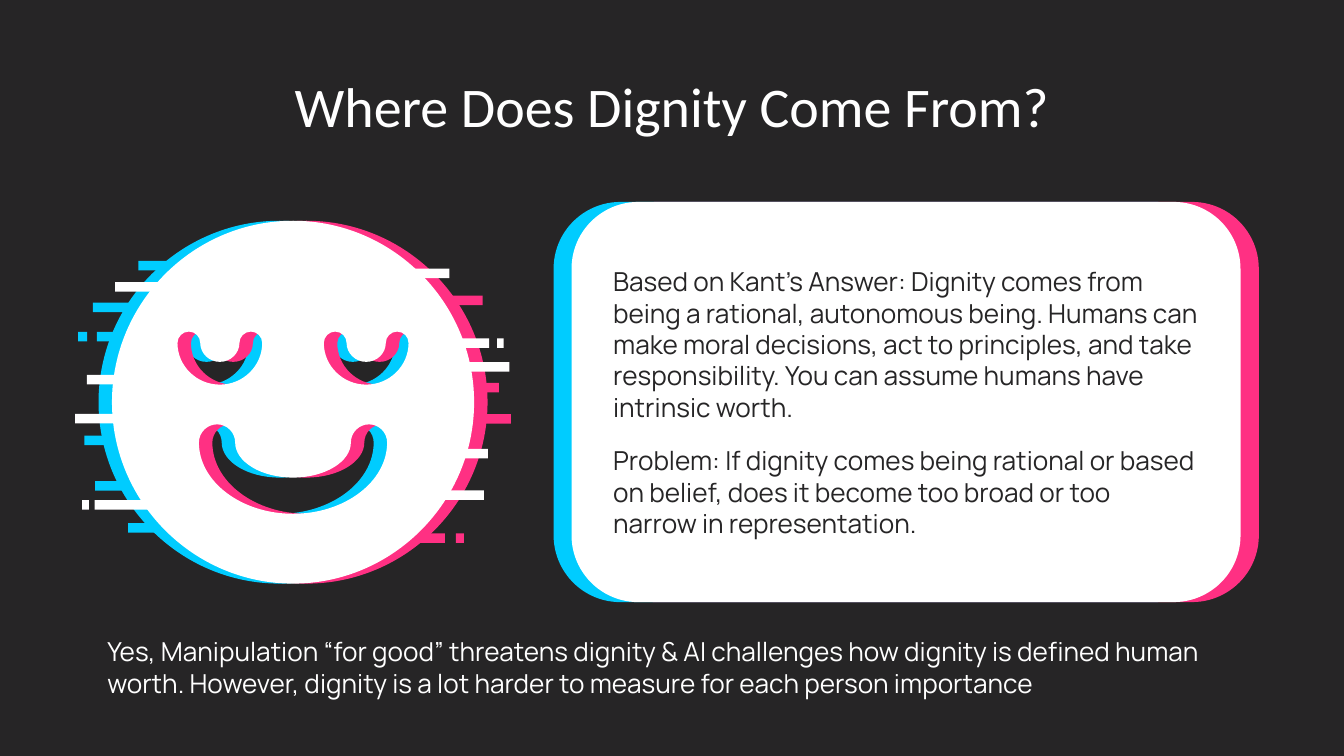
from math import cos, radians, sin
from lxml import etree
from pptx import Presentation
from pptx import util as u
from pptx.dml import color
from pptx.enum import shapes, text
from pptx.oxml import ns

DARK = color.RGBColor(0x26, 0x25, 0x26)
CYAN = color.RGBColor(0x00, 0xCC, 0xFF)
PINK = color.RGBColor(0xFF, 0x30, 0x83)
WHITE = color.RGBColor(0xFF, 0xFF, 0xFF)


def paint(shape, tone):
    shape.shadow.inherit = False
    shape.fill.solid()
    shape.fill.fore_color.rgb = tone
    shape.line.fill.background()


def arc(x, y, w, h, start, end):
    turn = 90 if end > start else -90
    pull = 0.55 * turn / 90
    dots = []
    for angle in range(start, end, turn):
        a, b = radians(angle), radians(angle + turn)
        dots += [(cos(a) - pull * sin(a), sin(a) + pull * cos(a)),
                 (cos(b) + pull * sin(b), sin(b) - pull * cos(b)),
                 (cos(b), sin(b))]
    return [(x + w * p, y + h * q) for p, q in dots]


deck = Presentation()
deck.slide_width, deck.slide_height = u.Pt(720), u.Pt(405)
slide = deck.slides.add_slide(deck.slide_layouts[6])
slide.background.fill.solid()
slide.background.fill.fore_color.rgb = DARK

card = slide.shapes.add_group_shape().shapes
for left, tone in [(296.6, CYAN), (316, PINK), (306.2, WHITE)]:
    panel = card.add_shape(shapes.MSO_SHAPE.ROUNDED_RECTANGLE,
                           u.Pt(left), u.Pt(108.2), u.Pt(358.4), u.Pt(214.4))
    panel.adjustments[0] = 0.167
    paint(panel, tone)

rings = []
for x, y, w, h, r in [(-39.2, -31.7, 22.7, 22.3, 6.1),
                      (39.2, -31.7, 22.7, 22.3, 6.1),
                      (0, 21.6, 50.4, 38.2, 9.7)]:
    rings.append(arc(x, y, w, h, 0, 180)
                 + arc(x - w + r, y, r, r, 180, 360)
                 + arc(x, y, w - 2 * r, h - 2 * r, 180, 0)
                 + arc(x + w - r, y, r, r, 180, 360))
rings.append(arc(0, 0, 97, 97.2, 0, 360))

bars = {
    PINK: [(221, 158.4, 37.6), (235.6, 221.9, 38.2), (200.2, 285.8, 38.2),
           (244.2, 285.8, 4.3), (229.7, 205.2, 37.6)],
    CYAN: [(45.2, 233.4, 37.6), (68.6, 280.3, 37.8), (51, 257.8, 37.6),
           (49.8, 162.2, 37.6), (74.2, 139.8, 48.2), (52, 177.8, 37.6),
           (41.9, 177.8, 4.8)],
    WHITE: [(212.2, 144, 28.6), (232.6, 240.5, 28.8), (40.3, 221.8, 40.3),
            (61.7, 151.2, 28.6), (50.7, 268, 32.6), (46.6, 200.9, 32),
            (224, 262.8, 35.3), (237.6, 194, 35.3), (226.8, 181.3, 35.3),
            (266.4, 181.3, 3.4), (44, 268, 3.6)],
}

face = slide.shapes.add_group_shape().shapes
for x, tone, rows in [(149.8, CYAN, []), (164.2, PINK, bars), (157, WHITE, [])]:
    pen = None
    for ring in rings:
        dots = [((x + a) * 100, (215.5 + b) * 100) for a, b in ring]
        if pen:
            pen.move_to(*dots[-1])
        else:
            pen = face.build_freeform(*dots[-1], scale=u.Pt(1) / 100)
        pen.add_line_segments(dots, close=True)
    head = pen.convert_to_shape()
    paint(head, tone)
    steps = list(head.element.iter(ns.qn("a:lnTo")))
    for i in range(0, len(steps), 3):
        bend = etree.Element(ns.qn("a:cubicBezTo"))
        steps[i].addprevious(bend)
        for step in steps[i:i + 3]:
            bend.append(step[0])
            step.getparent().remove(step)
    for shade in rows:
        for left, top, wide in bars[shade]:
            bar = face.add_shape(shapes.MSO_SHAPE.RECTANGLE,
                                 u.Pt(left), u.Pt(top), u.Pt(wide), u.Pt(5.1))
            paint(bar, shade)

LEFT, MID = text.PP_ALIGN.LEFT, text.PP_ALIGN.CENTER
TOP, HALF = text.MSO_ANCHOR.TOP, text.MSO_ANCHOR.MIDDLE
notes = [
    ((321.4, 124.8, 328.3, 181.4), HALF, LEFT,
     {"name": "Manrope", "size": u.Pt(14)}, DARK,
     ["Based on Kant’s Answer: Dignity comes from being a rational, "
      "autonomous being. Humans can make moral decisions, act to principles, "
      "and take responsibility. You can assume humans have intrinsic worth.",
      "Problem: If dignity comes being rational or based on belief, does it "
      "become too broad or too narrow in representation."]),
    ((56.2, 31, 607.6, 45.4), TOP, MID,
     {"name": "Calibri", "size": u.Pt(30)}, WHITE,
     ["Where Does Dignity Come From?"]),
    ((50.4, 333.4, 619.2, 50.4), TOP, LEFT,
     {"name": "Manrope", "size": u.Pt(14)}, WHITE,
     ["Yes, Manipulation “for good” threatens dignity & AI challenges how "
      "dignity is defined human worth. However, dignity is a lot harder to "
      "measure for each person importance"]),
]
for spot, hold, side, look, tone, lines in notes:
    frame = slide.shapes.add_textbox(*map(u.Pt, spot)).text_frame
    fit = {"word_wrap": True, "vertical_anchor": hold}
    for edge in ("left", "top", "right", "bottom"):
        fit["margin_" + edge] = u.Pt(7.2)
    for key, value in fit.items():
        setattr(frame, key, value)
    frame.text = "\n".join(lines)
    for i, para in enumerate(frame.paragraphs):
        para.alignment = side
        if i:
            para.space_before = para.space_after = u.Pt(12)
        font = para.runs[0].font
        font.color.rgb = tone
        for key, value in look.items():
            setattr(font, key, value)

deck.save("out.pptx")
